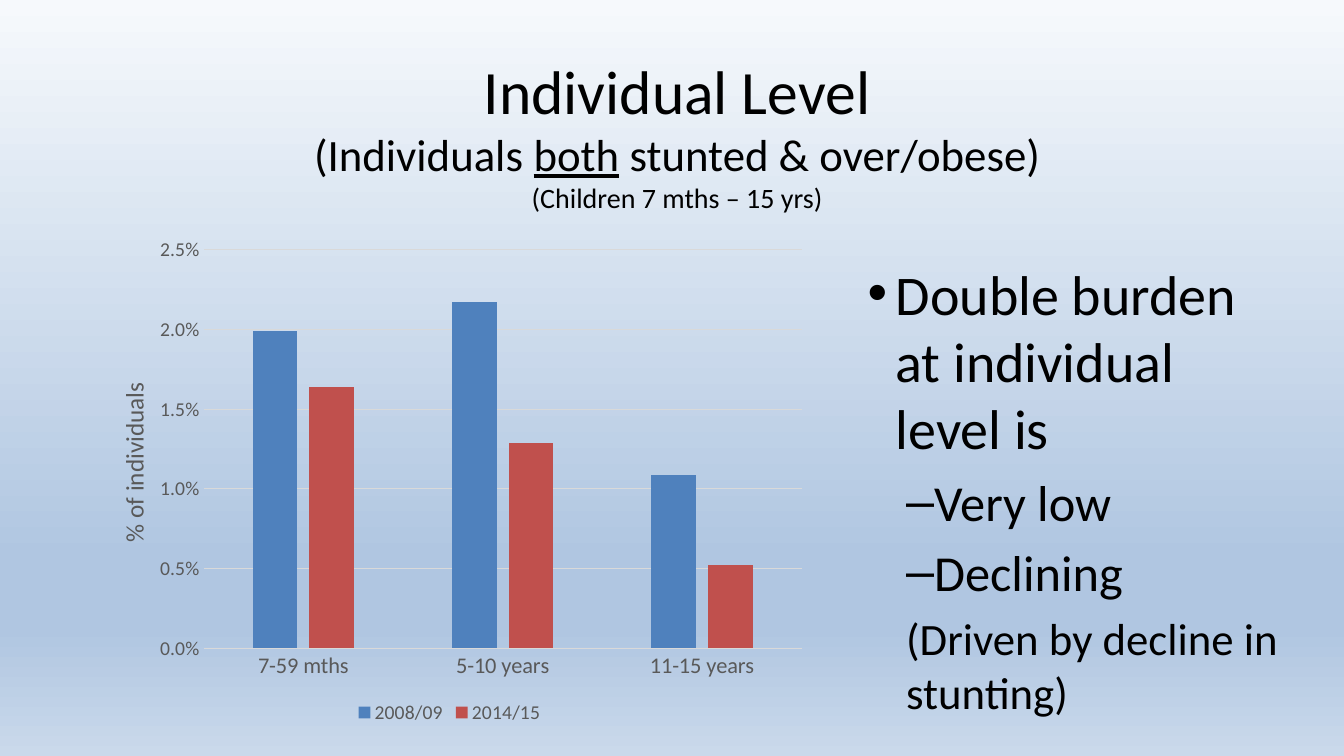
"""Builds a slide on the double burden of malnutrition at individual level."""
from copy import deepcopy

from lxml import etree
from pptx import Presentation
from pptx import util as u
from pptx.chart.data import CategoryChartData
from pptx.dml.color import RGBColor
from pptx.enum import chart as ch, text
from pptx.oxml.ns import qn

COLOURS = {"text": "000000", "label": "595959", "rule": "D9D9D9",
           "2008/09": "4F81BD", "2014/15": "C0504D"}
SKY = [(0, "F6F9FC"), (0.74, "B0C6E1"), (0.83, "B0C6E1"), (1, "CAD9EB")]


def style(font, size, colour="text", **extras):
    values = {"name": "Calibri", "size": u.Pt(size), "bold": False, **extras}
    for key, value in values.items():
        setattr(font, key, value)
    font.color.rgb = RGBColor.from_string(COLOURS[colour])


def place(parent, index, **values):
    for old in parent.findall(qn("c:layout")):
        parent.remove(old)
    layout = etree.Element(qn("c:layout"))
    manual = etree.SubElement(layout, qn("c:manualLayout"))
    for key, value in values.items():
        etree.SubElement(manual, qn(f"c:{key}")).set("val", str(value))
    parent.insert(index, layout)


deck = Presentation()
deck.slide_width, deck.slide_height = u.Pt(960), u.Pt(540)
slide = deck.slides.add_slide(deck.slide_layouts[6])

sky = slide.background.fill
sky.gradient()
sky.gradient_angle = 270
stops = slide.element.find(".//" + qn("a:gsLst"))
for _ in range(len(SKY) - len(stops)):
    stops.append(deepcopy(stops[0]))
for stop, (position, colour) in zip(sky.gradient_stops, SKY):
    stop.position = position
    stop.color.rgb = RGBColor.from_string(colour)

heading = slide.shapes.add_textbox(u.Pt(72), u.Pt(34), u.Pt(823.5), u.Pt(50)).text_frame
heading.word_wrap = True
headline = heading.paragraphs[0]
headline.alignment = text.PP_ALIGN.CENTER
for words, size, underline, ends_line in [
        ("Individual Level", 44, False, True),
        ("(Individuals ", 32, False, False),
        ("both", 32, True, False),
        (" stunted & over/obese)", 32, False, True),
        ("(Children 7 mths – 15 yrs)", 20, False, False)]:
    run = headline.add_run()
    run.text = words
    style(run.font, size, underline=underline)
    if ends_line:
        headline.add_line_break()

findings = slide.shapes.add_textbox(u.Pt(612.7), u.Pt(181.5), u.Pt(315.4), u.Pt(222)).text_frame
findings.word_wrap = True
for row, (words, size, level, margin, indent, bullet) in enumerate([
        ("Double burden at individual level is", 40, 0, 20, -20, "•"),
        ("Very low", 36, 1, 44, -16.5, "–"),
        ("Declining", 36, 1, 44, -16.5, "–"),
        ("(Driven by decline in stunting)", 32, 1, 27.4, 0, None)]):
    finding = findings.add_paragraph() if row else findings.paragraphs[0]
    finding.text = words
    finding.level = level
    if row:
        finding.space_before = u.Pt(size * 0.2)
    properties = finding._p.get_or_add_pPr()
    properties.set("marL", str(u.Pt(margin)))
    properties.set("indent", str(u.Pt(indent)))
    if bullet:
        etree.SubElement(properties, qn("a:buFont")).set("typeface", "Arial")
        etree.SubElement(properties, qn("a:buChar")).set("char", bullet)
    else:
        etree.SubElement(properties, qn("a:buNone"))
    style(finding.runs[0].font, size)

prevalence = CategoryChartData(number_format="0.0%")
prevalence.categories = ["7-59 mths", "5-10 years", "11-15 years"]
prevalence.add_series("2008/09", [0.0199, 0.0217, 0.0109])
prevalence.add_series("2014/15", [0.0164, 0.0129, 0.0052])
chart = slide.shapes.add_chart(ch.XL_CHART_TYPE.COLUMN_CLUSTERED, u.Pt(59), u.Pt(162.7),
                               u.Pt(524.2), u.Pt(357.8), prevalence).chart
style(chart.font, 10)
chart.has_title = False
chart.has_legend = True
chart.legend.position = ch.XL_LEGEND_POSITION.BOTTOM
chart.legend.include_in_layout = False
style(chart.legend.font, 14, "label")

bars = chart.plots[0]
for key, value in {"gap_width": 219, "overlap": -27, "vary_by_categories": False}.items():
    setattr(bars, key, value)
for survey in bars.series:
    survey.format.fill.solid()
    survey.format.fill.fore_color.rgb = RGBColor.from_string(COLOURS[survey.name])

ages, share = chart.category_axis, chart.value_axis
for axis, size in [(ages, 16), (share, 14)]:
    axis.major_tick_mark = axis.minor_tick_mark = ch.XL_TICK_MARK.NONE
    style(axis.tick_labels.font, size, "label")
for key, value in {"minimum_scale": 0, "maximum_scale": 0.025, "major_unit": 0.005,
                   "has_major_gridlines": True}.items():
    setattr(share, key, value)
share.tick_labels.number_format = "0.0%"
share.tick_labels.number_format_is_linked = False
share.format.line.fill.background()
for line in (ages.format.line, share.major_gridlines.format.line):
    line.color.rgb = RGBColor.from_string(COLOURS["rule"])
    line.width = u.Pt(0.75)

caption = share.axis_title.text_frame
caption.text = "% of individuals"
style(caption.paragraphs[0].runs[0].font, 18, "label")
caption_xml = share.axis_title._element
turn = caption_xml.find(".//" + qn("a:bodyPr"))
turn.set("rot", "-5400000")
turn.set("vert", "horz")
place(caption_xml, 1, xMode="edge", yMode="edge", x=0.04, y=0.3)
place(chart._chartSpace.find(".//" + qn("c:plotArea")), 0, layoutTarget="inner",
      xMode="edge", yMode="edge", x=0.165, y=0.044, w=0.815, h=0.796)

deck.save("out.pptx")
